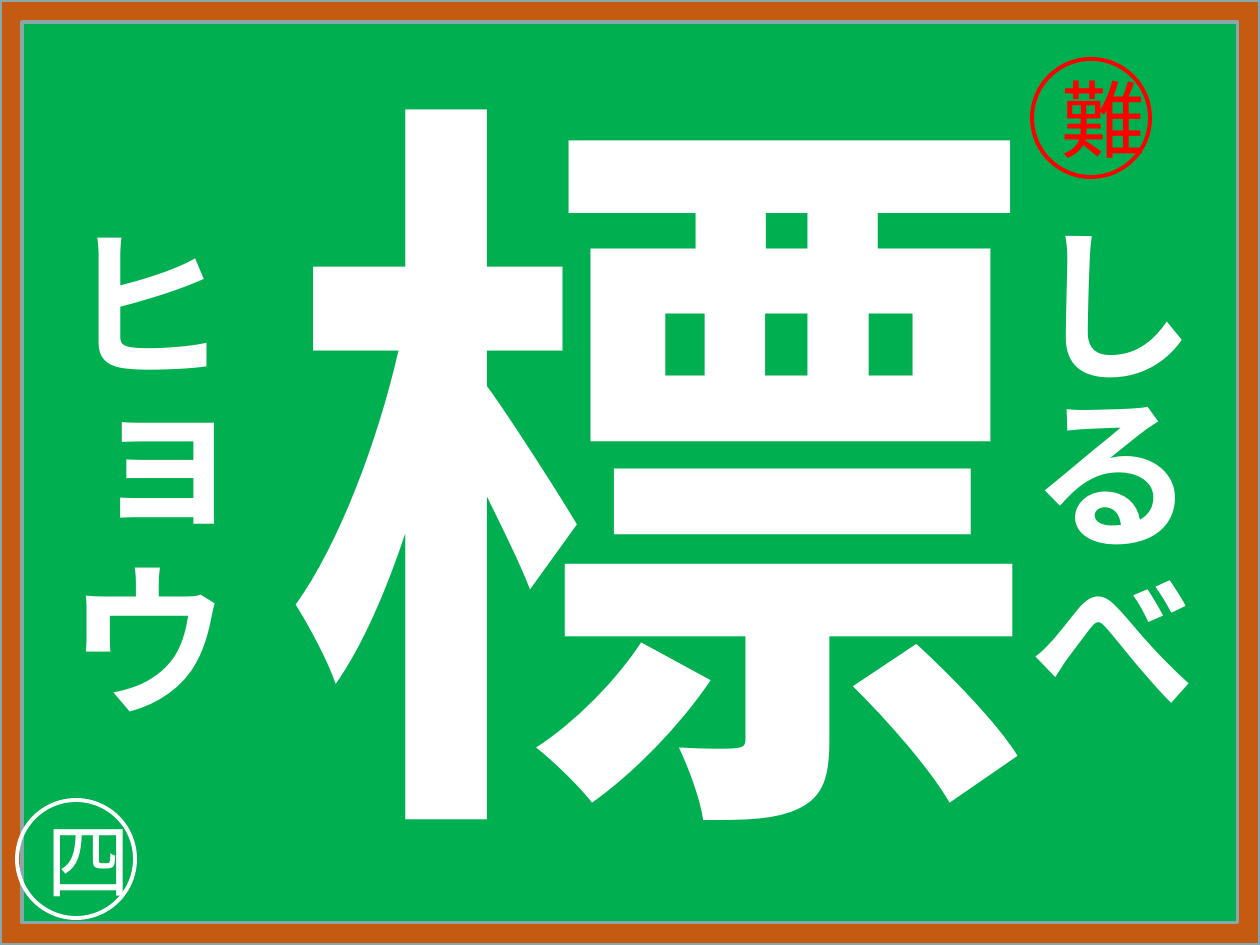
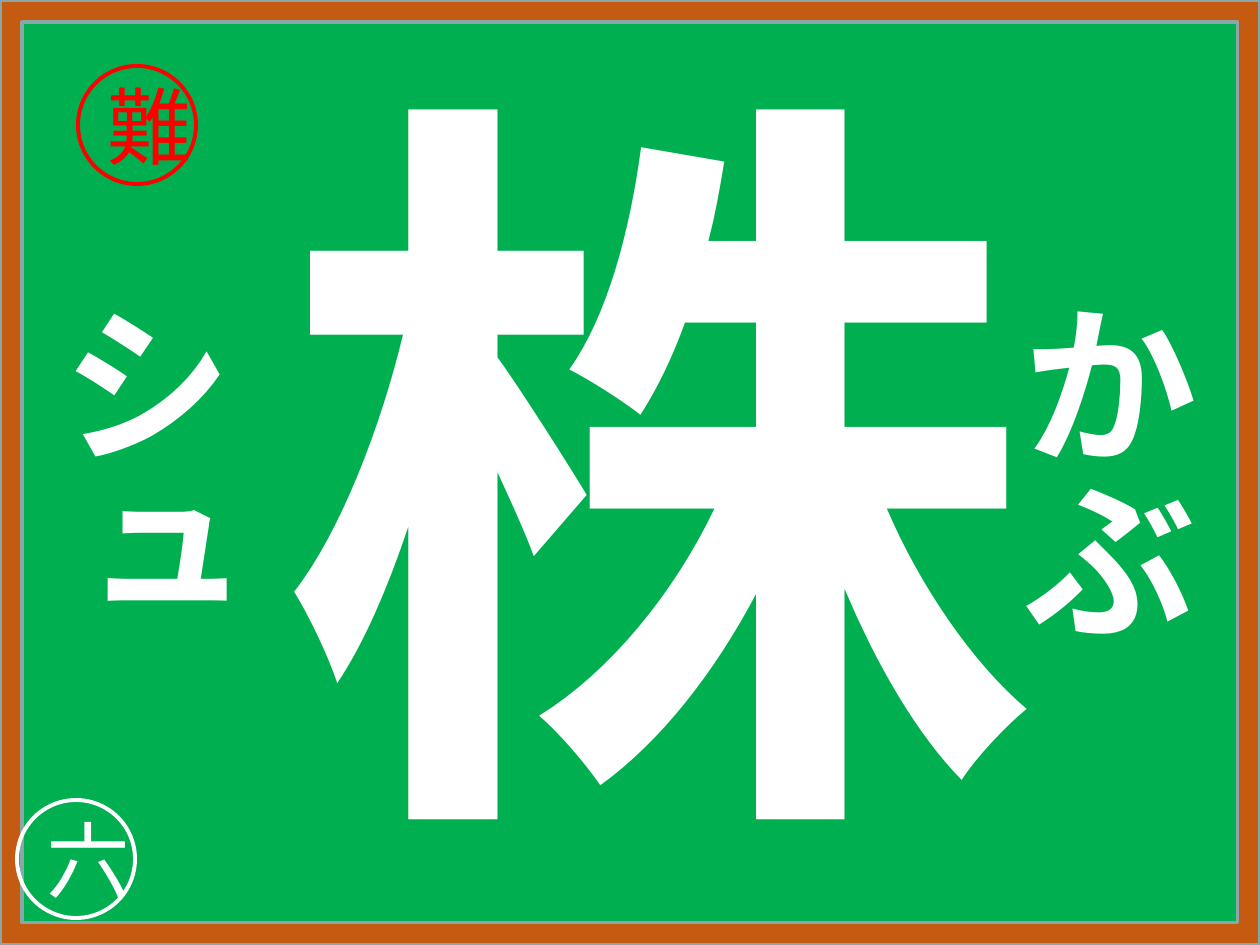
from pptx import Presentation
from pptx.dml.color import RGBColor
from pptx.enum.lang import MSO_LANGUAGE_ID
from pptx.enum.shapes import MSO_SHAPE
from pptx.enum.text import MSO_ANCHOR, MSO_AUTO_SIZE, PP_ALIGN
from pptx.util import Pt

FRAME, ELLIPSE = MSO_SHAPE.FRAME, MSO_SHAPE.OVAL
CENTER, MIDDLE = PP_ALIGN.CENTER, MSO_ANCHOR.MIDDLE
NO_FIT, GROW = MSO_AUTO_SIZE.NONE, MSO_AUTO_SIZE.SHAPE_TO_FIT_TEXT
JAPANESE = MSO_LANGUAGE_ID.JAPANESE

SCALE = 914400 / 126  # EMU per px
WIDTH, HEIGHT = 1260, 945
FONT = "Noto Sans CJK JP"
BOARD, WOOD, EDGE = "00B050", "C55A11", "8AA6A8"
CHALK, RED = "FFFFFF", "FF0000"
TITLE_ONLY = 5

KANJI_BOX = (228, 69, 804, 790)
KANJI_INSET = 18
BADGE = 118
GRADE_AT = (17, 800)


def px(n):
    return round(n * SCALE)


def emu(box):
    return [px(n) for n in box]


def rgb(color):
    return RGBColor.from_string(color)


def write(sp, text, size, color, bold=False):
    """Put one centred paragraph into a shape."""
    p = sp.text_frame.paragraphs[0]
    p.text = text
    p.alignment = CENTER
    p.line_spacing = 1.0
    font = p.font
    font.size, font.bold = Pt(size), bold
    font.color.rgb = rgb(color)
    # East Asian text takes its typeface from a:ea and its glyph forms from lang
    for r in p.runs:
        r.font.name, r.font.language_id = FONT, JAPANESE
        latin = r.font._element.find("{*}latin")
        ea = latin.makeelement(latin.tag.replace("latin", "ea"), {"typeface": FONT})
        latin.addnext(ea)


def set_vertical(sp):
    sp.text_frame._txBody.bodyPr.set("vert", "eaVert")


def draw_board(prs, s):
    """Green board with a wooden frame, kept on the slide master."""
    master = prs.slide_master
    fill = master.background.fill
    fill.solid()
    fill.fore_color.rgb = rgb(BOARD)
    sp = s.shapes.add_shape(FRAME, *emu((0, 0, WIDTH, HEIGHT)))
    sp.adjustments[0] = 0.0235
    sp.shadow.inherit = False
    sp.fill.solid()
    sp.fill.fore_color.rgb = rgb(WOOD)
    sp.line.color.rgb = rgb(EDGE)
    sp.line.width = Pt(2)
    master.shapes._spTree.insert(2, sp._element)


def add_kanji(s, box, text):
    sp = s.shapes.title
    sp.left, sp.top, sp.width, sp.height = emu(box)
    tf = sp.text_frame
    tf.auto_size, tf.vertical_anchor = NO_FIT, MIDDLE
    tf.margin_top = px(KANJI_INSET)
    set_vertical(sp)
    write(sp, text, 432, CHALK, bold=True)


def add_reading(s, box, text, size):
    sp = s.shapes.add_textbox(*emu(box))
    sp.text_frame.word_wrap = False
    sp.text_frame.auto_size = GROW
    set_vertical(sp)
    write(sp, text, size, CHALK, bold=True)


def add_badge(s, at, text, color):
    sp = s.shapes.add_shape(ELLIPSE, *emu((*at, BADGE, BADGE)))
    sp.shadow.inherit = False
    sp.fill.background()
    sp.line.color.rgb = rgb(color)
    sp.line.width = Pt(2.25)
    sp.text_frame.word_wrap = True
    sp.text_frame.vertical_anchor = MIDDLE
    write(sp, text, 48, color)


def add_card(prs, kanji, kun, on, size, grade, hard_at):
    """One kanji with its kun reading (right), on reading (left) and badges."""
    s = prs.slides.add_slide(prs.slide_layouts[TITLE_ONLY])
    add_kanji(s, KANJI_BOX, kanji)
    for text, box in (kun, on):
        add_reading(s, box, text, size)
    add_badge(s, GRADE_AT, grade, CHALK)
    add_badge(s, hard_at, "難", RED)
    return s


def main():
    prs = Presentation()
    prs.slide_width, prs.slide_height = px(WIDTH), px(HEIGHT)
    first = add_card(prs, "標", ("しるべ", (986, 208, 229, 513)),
                     ("ヒョウ", (21, 208, 229, 513)), 96, "四", (1032, 59))
    add_card(prs, "株", ("かぶ", (978, 285, 237, 359)),
             ("シュ", (15, 284, 237, 359)), 100, "六", (78, 66))
    draw_board(prs, first)
    prs.save("out.pptx")


if __name__ == "__main__":
    main()
